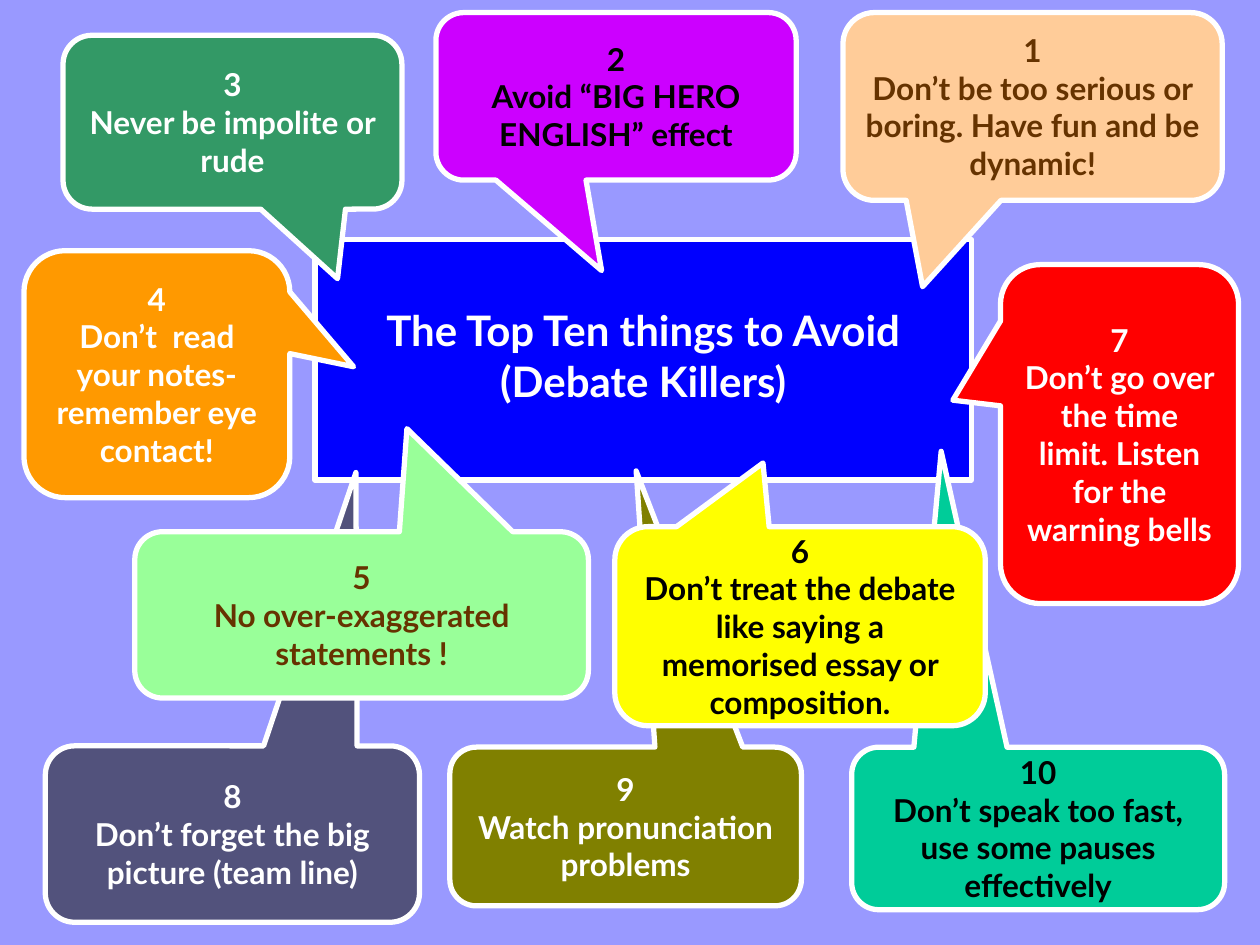
from pptx import Presentation
from pptx.dml.color import RGBColor
from pptx.enum import shapes, text
from pptx.util import Inches, Pt

WHITE = RGBColor(0xFF, 0xFF, 0xFF)
BLACK = RGBColor(0x00, 0x00, 0x00)
BROWN = RGBColor(0x66, 0x33, 0x00)
LAVENDER = RGBColor(0x99, 0x99, 0xFF)
BLUE = RGBColor(0x00, 0x00, 0xFF)
GREEN = RGBColor(0x33, 0x99, 0x66)
PURPLE = RGBColor(0xCC, 0x00, 0xFF)
PEACH = RGBColor(0xFF, 0xCC, 0x99)
RED = RGBColor(0xFF, 0x00, 0x00)
ORANGE = RGBColor(0xFF, 0x99, 0x00)
SLATE = RGBColor(0x52, 0x52, 0x7C)
MINT = RGBColor(0x99, 0xFF, 0x99)
OLIVE = RGBColor(0x80, 0x80, 0x00)
TEAL = RGBColor(0x00, 0xCC, 0x99)
YELLOW = RGBColor(0xFF, 0xFF, 0x00)

FONT = "Lato"

# Back to front: number, advice, box, pointer tip (from centre, in box sizes), fill, ink
CALLOUTS = [
    (3, "Never be impolite or rude",
     (0.5, 0.28, 2.69, 1.38), (0.31, 0.9), GREEN, WHITE),
    (2, "Avoid “BIG HERO ENGLISH” effect",
     (3.46, 0.1, 2.86, 1.33), (-0.04, 1.04), PURPLE, BLACK),
    (1, "Don’t be too serious or boring. Have fun and be dynamic!",
     (6.69, 0.1, 3.01, 1.49), (-0.29, 0.96), PEACH, BROWN),
    (7, "Don’t go over the time limit. Listen for the warning bells",
     (7.94, 2.1, 1.89, 2.69), (-0.7, -0.1), RED, WHITE),
    (4, "Don’t  read your notes- remember eye contact!",
     (0.19, 1.99, 2.11, 1.96), (0.74, -0.03), ORANGE, WHITE),
    (8, "Don’t forget the big picture (team line)",
     (0.36, 5.92, 2.97, 1.4), (0.33, -2.05), SLATE, WHITE),
    (5, "No over-exaggerated statements !",
     (1.07, 4.22, 3.6, 1.32), (0.1, -1.12), MINT, BROWN),
    (9, "Watch pronunciation problems",
     (3.57, 5.93, 2.79, 1.26), (0.03, -2.24), OLIVE, WHITE),
    (10, "Don’t speak too fast, use some pauses effectively",
     (6.76, 5.93, 2.96, 1.29), (-0.26, -2.32), TEAL, BLACK),
    (6, "Don’t treat the debate like saying a memorised essay or composition.",
     (4.88, 4.18, 2.94, 1.58), (-0.1, -0.82), YELLOW, BLACK),
]


def add_panel(s, kind, box, fill, line_width, lines, size, ink):
    """Add a white-edged shape with one centred bold paragraph per line."""
    sp = s.shapes.add_shape(kind, *map(Inches, box))
    sp.shadow.inherit = False
    sp.fill.solid()
    sp.fill.fore_color.rgb = fill
    sp.line.color.rgb = WHITE
    sp.line.width = Pt(line_width)
    tf = sp.text_frame
    tf.word_wrap = True
    tf.vertical_anchor = text.MSO_ANCHOR.MIDDLE
    for i, line in enumerate(lines):
        p = tf.add_paragraph() if i else tf.paragraphs[0]
        p.alignment = text.PP_ALIGN.CENTER
        r = p.add_run()
        r.text = line
        r.font.name = FONT
        r.font.size = Pt(size)
        r.font.bold = True
        r.font.color.rgb = ink
    return sp


def add_title(s, box):
    sp = add_panel(s, shapes.MSO_SHAPE.RECTANGLE, box, BLUE, 3.25,
                   ["The Top Ten things to Avoid (Debate Killers)"], 24, WHITE)
    sp.text_frame.margin_bottom = Inches(0.12)


def add_callout(s, number, advice, box, tip, fill, ink):
    sp = add_panel(s, shapes.MSO_SHAPE.ROUNDED_RECTANGULAR_CALLOUT, box, fill, 3,
                   [str(number), advice], 18, ink)
    sp.adjustments[0], sp.adjustments[1] = tip


def main():
    prs = Presentation()
    prs.slide_width, prs.slide_height = Inches(10), Inches(7.5)
    s = prs.slides.add_slide(prs.slide_layouts[6])
    s.background.fill.solid()
    s.background.fill.fore_color.rgb = LAVENDER
    add_title(s, (2.5, 1.9, 5.21, 1.91))
    for callout in CALLOUTS:
        add_callout(s, *callout)
    prs.save("out.pptx")


if __name__ == "__main__":
    main()
